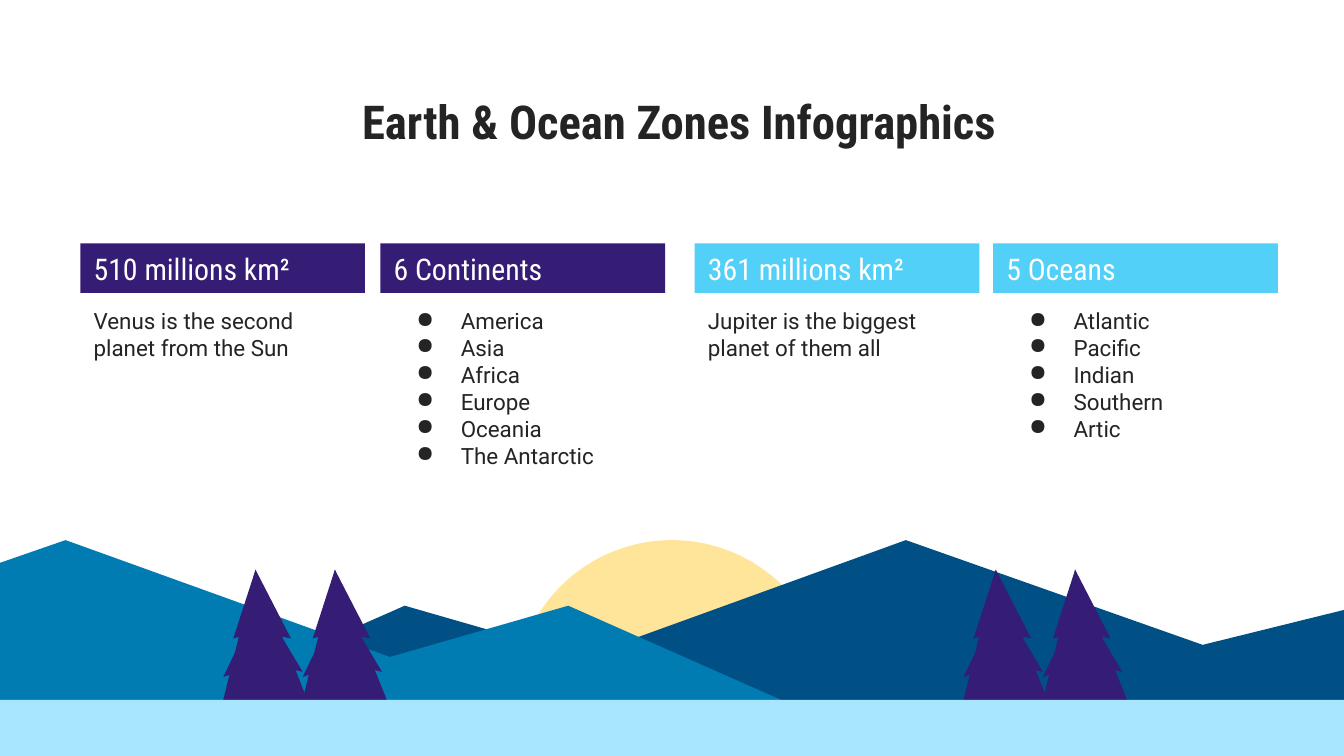
from dataclasses import dataclass
from math import cos, pi, sin

from lxml.etree import SubElement
from pptx import Presentation
from pptx.dml.color import RGBColor as Rgb
from pptx.enum.shapes import MSO_SHAPE as Kind
from pptx.enum.text import MSO_ANCHOR as Anchor, MSO_AUTO_SIZE as Fit, PP_ALIGN as Align
from pptx.oxml.ns import qn
from pptx.util import Cm, Pt


@dataclass(frozen=True)
class Theme:
    ink: str = "242424"
    white: str = "FFFFFF"
    purple: str = "351C75"
    sky: str = "52D0F8"
    sun: str = "FFE599"
    far: str = "005085"
    near: str = "007CB2"
    sea: str = "A8E6FF"
    head: str = "Roboto Condensed"
    body: str = "Roboto"
    title_size: int = 25
    head_size: int = 16
    body_size: int = 12


THEME = Theme()

# Header, header colour, lines, bulleted, left edge
CARDS = [
    ("510 millions km²", THEME.purple, ["Venus is the second planet from the Sun"], False, 1.52),
    ("6 Continents", THEME.purple,
     ["America", "Asia", "Africa", "Europe", "Oceania", "The Antarctic"], True, 7.19),
    ("361 millions km²", THEME.sky, ["Jupiter is the biggest planet of them all"], False, 13.13),
    ("5 Oceans", THEME.sky,
     ["Atlantic", "Pacific", "Indian", "Southern", "Artic"], True, 18.77),
]

# Outlines in cm, from the top left of the hills or the tree
FAR = [(17.12, 0), (11.02, 2.21), (7.65, 1.24), (3.61, 3.02),
       (25.4, 3.02), (25.4, 1.32), (22.73, 1.98)]
NEAR = [(1.24, 0), (0, 0.43), (0, 3.02), (14.76, 3.02), (10.74, 1.24), (7.37, 2.21)]
TREE = [
    [(0.61, 0), (0, 2.46), (1.59, 2.46)],
    [(0.61, 0), (0.19, 1.3), (0.3, 1.27), (0.75, 1.19), (1.28, 1.3)],
    [(0.38, 1.24), (0, 2.03), (0.74, 1.75), (1.5, 1.93), (1.09, 1.24)],
]


def paint(shape, color):
    shape.shadow.inherit = False
    shape.fill.solid()
    shape.fill.fore_color.rgb = Rgb.from_string(color)
    shape.line.fill.background()


def add_bullet(para, color):
    props = para._p.get_or_add_pPr()
    props.set("marL", str(Cm(1.27)))
    props.set("indent", str(Cm(-0.84)))
    tint = SubElement(props, qn("a:buClr"))
    SubElement(tint, qn("a:srgbClr")).set("val", color)
    SubElement(props, qn("a:buChar")).set("char", "●")


def write(shape, lines, *, font, size, color=THEME.ink, bold=False,
          align=Align.LEFT, anchor=Anchor.TOP, bullets=False):
    frame = shape.text_frame
    frame.word_wrap = True
    frame.auto_size = Fit.NONE
    frame.vertical_anchor = anchor
    frame.margin_left = frame.margin_right = Cm(0.25)
    frame.margin_top = frame.margin_bottom = Cm(0.25)
    for i, line in enumerate(lines):
        para = frame.add_paragraph() if i else frame.paragraphs[0]
        para.alignment = align
        if bullets:
            add_bullet(para, color)
        run = para.add_run()
        run.text = line
        run.font.name = font
        run.font.size = Pt(size)
        run.font.bold = bold
        run.font.color.rgb = Rgb.from_string(color)


def add_rect(shapes, left, top, width, height, color):
    rect = shapes.add_shape(Kind.RECTANGLE, Cm(left), Cm(top), Cm(width), Cm(height))
    paint(rect, color)
    return rect


def add_outline(shapes, left, top, points, color):
    dots = [(Cm(left + x), Cm(top + y)) for x, y in points]
    pen = shapes.build_freeform(*dots[0])
    pen.add_line_segments(dots[1:], close=True)
    paint(pen.convert_to_shape(), color)


def add_title(slide, left, top, width, height):
    title = slide.shapes.title
    title.left, title.top = Cm(left), Cm(top)
    title.width, title.height = Cm(width), Cm(height)
    write(title, ["Earth & Ocean Zones Infographics"], font=THEME.head,
          size=THEME.title_size, bold=True, align=Align.CENTER)


def add_card(shapes, left, top, width, height, name, color, lines, bullets):
    bar = 0.94
    head = add_rect(shapes, left, top, width, bar, color)
    write(head, [name], font=THEME.head, size=THEME.head_size,
          color=THEME.white, anchor=Anchor.MIDDLE)
    body = shapes.add_textbox(Cm(left), Cm(top + bar + 0.02), Cm(width), Cm(height - bar - 0.02))
    write(body, lines, font=THEME.body, size=THEME.body_size, bullets=bullets)


def add_tree(shapes, left, top):
    group = shapes.add_group_shape()
    for part in TREE:
        add_outline(group.shapes, left, top, part, THEME.purple)


def add_scene(shapes, left, top, width, height):
    """Sun, hills, trees and the sea below them."""
    shore, radius, steps = 3.02, 2.97, 60
    arc = [(width / 2 - radius * cos(pi * i / steps), radius - radius * sin(pi * i / steps))
           for i in range(steps + 1)]
    base = [(width / 2 + radius, shore), (width / 2 - radius, shore)]
    hills = shapes.add_group_shape().shapes
    for points, color in ((arc + base, THEME.sun), (FAR, THEME.far), (NEAR, THEME.near)):
        add_outline(hills, left, top, points, color)
    for pair in (18.21, 4.22):
        for step in (1.5, 0):
            add_tree(shapes, left + pair + step, top + 0.56)
    add_rect(shapes, left - 0.13, top + shore, width + 0.5, height - shore, THEME.sea)


def main():
    deck = Presentation()
    deck.slide_width, deck.slide_height = Cm(25.4), Cm(14.29)
    slide = deck.slides.add_slide(deck.slide_layouts[5])
    add_title(slide, 1.5, 1.5, 22.66, 1.6)
    for name, color, lines, bullets, left in CARDS:
        add_card(slide.shapes, left, 4.6, 5.38, 4.49, name, color, lines, bullets)
    add_scene(slide.shapes, 0, 10.21, 25.4, 4.29)
    deck.save("out.pptx")


if __name__ == "__main__":
    main()
